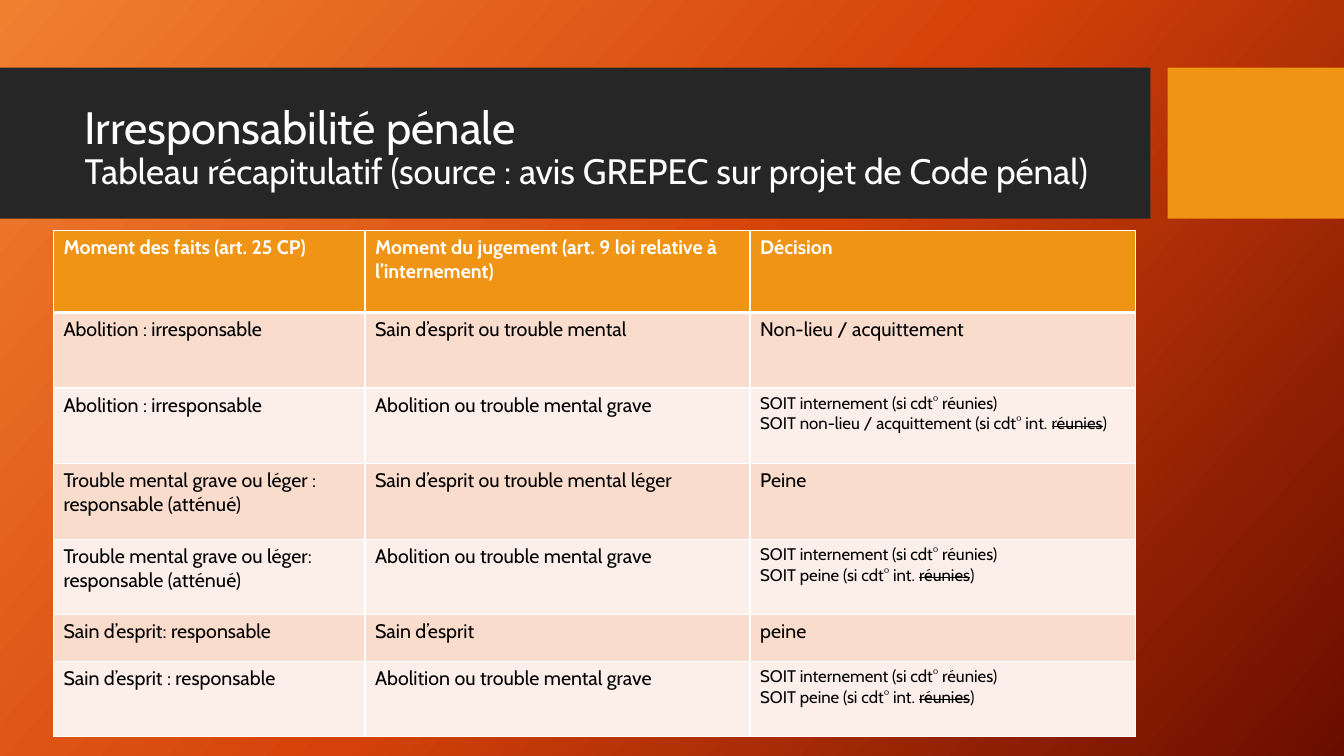
from copy import deepcopy

from lxml.etree import SubElement
from pptx import Presentation
from pptx.dml.color import RGBColor
from pptx.enum.shapes import MSO_SHAPE
from pptx.enum.text import MSO_ANCHOR, MSO_AUTO_SIZE, PP_ALIGN
from pptx.oxml.ns import qn
from pptx.util import Inches, Pt

FONT = "Cabin"
COLORS = {
    "white": "FFFFFF",
    "black": "000000",
    "band": "262626",
    "accent": "F09415",
    "odd_row": "F9DCCC",
    "even_row": "FCEEE8",
}
BACKGROUND_STOPS = [(0, "F18031"), (0.5, "D54209"), (1, "6A0D00")]

COLUMN_WIDTHS = [3.09, 3.82, 3.82]
ROW_HEIGHTS = [0.81, 0.75, 0.75, 0.75, 0.75, 0.46, 0.75]
INTERNMENT = "SOIT internement (si cdt° réunies)"
# Text between tildes is struck through; a line feed starts a paragraph.
PENALTY_CHOICE = INTERNMENT + "\nSOIT peine (si cdt° int. ~réunies~)"
ACQUITTAL_CHOICE = INTERNMENT + "\nSOIT non-lieu / acquittement (si cdt° int. ~réunies~)"
SEVERE = "Abolition ou trouble mental grave"
DECISIONS = [
    ["Moment des faits (art. 25 CP)",
     "Moment du jugement (art. 9 loi relative à l’internement)", "Décision"],
    ["Abolition : irresponsable", "Sain d’esprit ou trouble mental", "Non-lieu / acquittement"],
    ["Abolition : irresponsable", SEVERE, ACQUITTAL_CHOICE],
    ["Trouble mental grave ou léger : responsable (atténué)",
     "Sain d’esprit ou trouble mental léger", "Peine"],
    ["Trouble mental grave ou léger: responsable (atténué)", SEVERE, PENALTY_CHOICE],
    ["Sain d’esprit: responsable", "Sain d’esprit", "peine"],
    ["Sain d’esprit : responsable", SEVERE, PENALTY_CHOICE],
]


def rgb(name):
    return RGBColor.from_string(COLORS[name])


def add_text(paragraph, text, *, size, color, bold=False):
    """Append runs, striking through the parts between tildes."""
    for index, part in enumerate(text.split("~")):
        run = paragraph.add_run()
        run.text = part
        run.font.name = FONT
        run.font.size = Pt(size)
        run.font.bold = bold
        run.font.color.rgb = rgb(color)
        if index % 2:
            run.font._element.set("strike", "sngStrike")


def paint_background(slide):
    fill = slide.background.fill
    fill.gradient()
    stop_list = slide.element.find(".//" + qn("a:gsLst"))
    stop_list.append(deepcopy(stop_list[-1]))
    for stop, (position, color) in zip(fill.gradient_stops, BACKGROUND_STOPS):
        stop.position = position
        stop.color.rgb = RGBColor.from_string(color)
    fill.gradient_angle = 360 - 42


def add_bar(slide, left, width, color):
    bar = slide.shapes.add_shape(
        MSO_SHAPE.RECTANGLE, Inches(left), Inches(0.67), Inches(width), Inches(1.5))
    bar.shadow.inherit = False
    bar.fill.solid()
    bar.fill.fore_color.rgb = rgb(color)
    bar.line.fill.background()


def write_title(slide):
    title = slide.shapes.title
    title.element.getparent().append(title.element)  # in front of the bars
    title.left, title.top = Inches(0.74), Inches(0.82)
    title.width, title.height = Inches(10.51), Inches(1.31)
    frame = title.text_frame
    frame.word_wrap = True
    frame.auto_size = MSO_AUTO_SIZE.NONE
    frame.vertical_anchor = MSO_ANCHOR.MIDDLE
    heading = frame.paragraphs[0]
    heading.alignment = PP_ALIGN.LEFT
    heading.line_spacing = 0.9
    add_text(heading, "Irresponsabilité pénale ", size=32.4, color="white")
    heading.add_line_break()
    SubElement(heading._p[-1], qn("a:rPr"), sz="3240")
    add_text(heading, "Tableau récapitulatif (source : avis GREPEC sur projet de Code pénal)",
             size=25.2, color="white")


def set_borders(cell, **widths):
    """Draw white cell borders; keywords are the side tags, values are points."""
    properties = cell._tc.get_or_add_tcPr()
    for side, width in widths.items():
        line = SubElement(properties, qn("a:" + side), w=str(Pt(width)))
        solid = SubElement(line, qn("a:solidFill"))
        SubElement(solid, qn("a:srgbClr"), val=COLORS["white"])


def fill_cell(cell, text, row):
    header = row == 0
    set_borders(cell, lnL=1, lnR=1, lnT=3 if row == 1 else 1, lnB=3 if header else 1)
    cell.fill.solid()
    cell.fill.fore_color.rgb = rgb(
        "accent" if header else "odd_row" if row % 2 else "even_row")
    lines = text.split("\n")
    for index, line in enumerate(lines):
        frame = cell.text_frame
        paragraph = frame.add_paragraph() if index else frame.paragraphs[0]
        add_text(paragraph, line, size=12 if len(lines) > 1 else 14,
                 color="white" if header else "black", bold=header)


def add_decision_table(slide):
    table = slide.shapes.add_table(
        len(ROW_HEIGHTS), len(COLUMN_WIDTHS), Inches(0.53), Inches(2.29),
        Inches(sum(COLUMN_WIDTHS)), Inches(sum(ROW_HEIGHTS))).table
    for column, width in zip(table.columns, COLUMN_WIDTHS):
        column.width = Inches(width)
    for table_row, height in zip(table.rows, ROW_HEIGHTS):
        table_row.height = Inches(height)
    for row, texts in enumerate(DECISIONS):
        for column, text in enumerate(texts):
            fill_cell(table.cell(row, column), text, row)


def main():
    deck = Presentation()
    deck.slide_width, deck.slide_height = Inches(13.33), Inches(7.5)
    slide = deck.slides.add_slide(deck.slide_layouts[5])
    paint_background(slide)
    add_bar(slide, 0, 11.41, "band")
    add_bar(slide, 11.58, 1.75, "accent")
    write_title(slide)
    add_decision_table(slide)
    deck.save("out.pptx")


if __name__ == "__main__":
    main()
